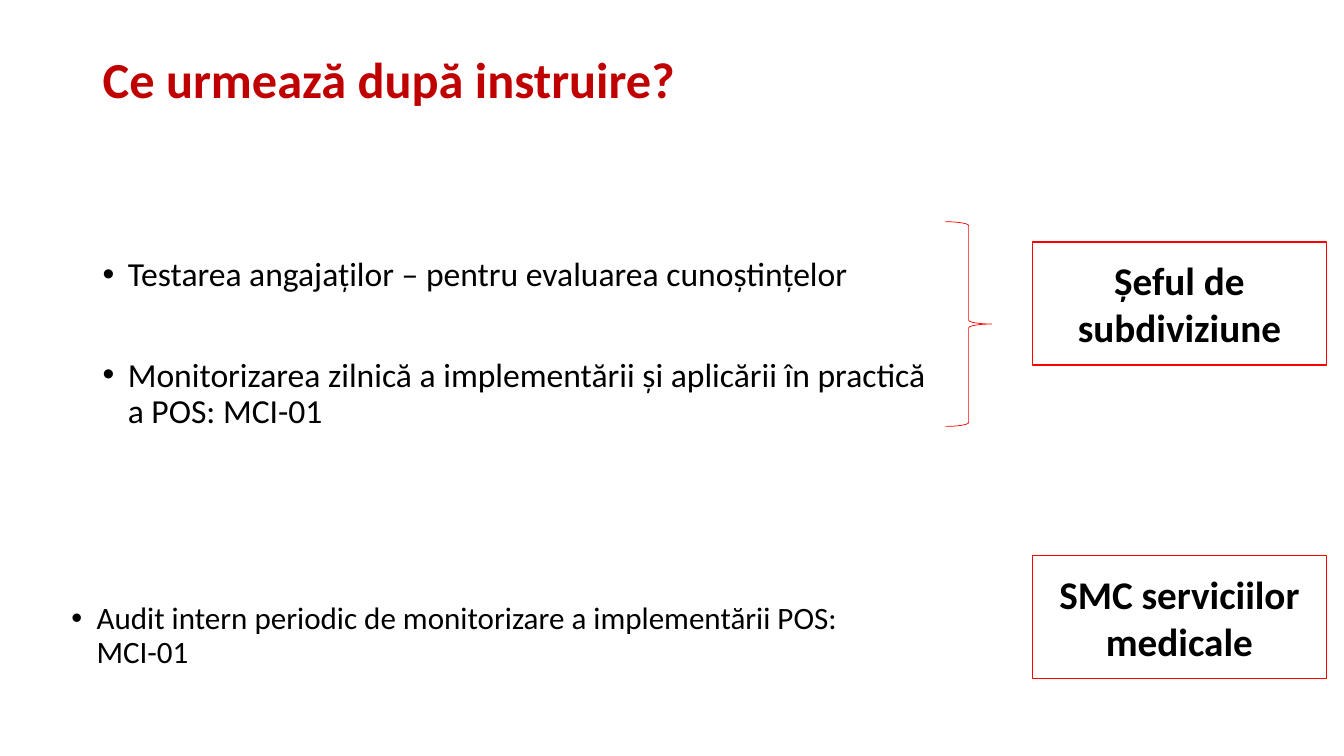
"""Build the slide on what follows after the training."""
from lxml.etree import SubElement
from pptx import Presentation
from pptx.dml.color import RGBColor as Rgb
from pptx.enum.shapes import MSO_SHAPE as Shape
from pptx.enum.text import MSO_ANCHOR as Anchor, PP_ALIGN as Align
from pptx.oxml.ns import qn
from pptx.util import Pt

COLORS = {"title": "C00000", "text": "000000", "line": "FF0000"}
FONT = "Calibri"
TITLE = "Ce urmează după instruire?"
TITLE_BOX = (66.24, 28.8, 828, 60.5)
BULLET_LISTS = [
    ((66.24, 180.4, 609.1, 155), 24, 46,
     ["Testarea angajaților – pentru evaluarea cunoștințelor",
      "Monitorizarea zilnică a implementării și aplicării în practică a POS: MCI-01"]),
    ((43.92, 427, 622, 46.8), 22.2, 10,
     ["Audit intern periodic de monitorizare a implementării POS: MCI-01"]),
]
BRACE_BOX = (675.36, 158.4, 33.12, 146.2)
OWNERS = [("Șeful de subdiviziune", 172.8), ("SMC serviciilor medicale", 396.7)]
OWNER_LEFT, OWNER_WIDTH, OWNER_HEIGHT = 737.28, 210.24, 87.84
INDENT = 18


def points(box):
    return [Pt(value) for value in box]


def style(paragraph, text, size, color="text", bold=False):
    paragraph.text = text
    font = paragraph.font
    font.name, font.size, font.bold = FONT, Pt(size), bold
    font.color.rgb = Rgb.from_string(COLORS[color])


def add_text_box(slide, box):
    frame = slide.shapes.add_textbox(*points(box)).text_frame
    frame.word_wrap = True
    return frame


def add_bullets(slide, box, size, gap, items):
    frame = add_text_box(slide, box)
    for index, item in enumerate(items):
        paragraph = frame.add_paragraph() if index else frame.paragraphs[0]
        style(paragraph, item, size)
        paragraph.line_spacing = 0.9
        paragraph.space_before = Pt(gap if index else 0)
        properties = paragraph._p.get_or_add_pPr()
        properties.set("marL", str(Pt(INDENT)))
        properties.set("indent", str(-Pt(INDENT)))
        SubElement(properties, qn("a:buFont"), typeface="Arial")
        SubElement(properties, qn("a:buChar"), char="•")


def add_outline(slide, kind, box, width):
    shape = slide.shapes.add_shape(kind, *points(box))
    shape.shadow.inherit = False
    shape.fill.background()
    shape.line.color.rgb = Rgb.from_string(COLORS["line"])
    shape.line.width = Pt(width)
    return shape


def main():
    presentation = Presentation()
    presentation.slide_width, presentation.slide_height = Pt(960), Pt(540)
    slide = presentation.slides.add_slide(presentation.slide_layouts[6])

    title = add_text_box(slide, TITLE_BOX)
    title.vertical_anchor = Anchor.MIDDLE
    style(title.paragraphs[0], TITLE, 36, "title", True)
    title.paragraphs[0].line_spacing = 0.9

    for bullet_list in BULLET_LISTS:
        add_bullets(slide, *bullet_list)

    add_outline(slide, Shape.RIGHT_BRACE, BRACE_BOX, 0.5)
    for owner, top in OWNERS:
        box = (OWNER_LEFT, top, OWNER_WIDTH, OWNER_HEIGHT)
        frame = add_outline(slide, Shape.RECTANGLE, box, 1).text_frame
        frame.word_wrap = True
        frame.vertical_anchor = Anchor.MIDDLE
        style(frame.paragraphs[0], owner, 28, bold=True)
        frame.paragraphs[0].alignment = Align.CENTER

    presentation.save("out.pptx")


if __name__ == "__main__":
    main()
